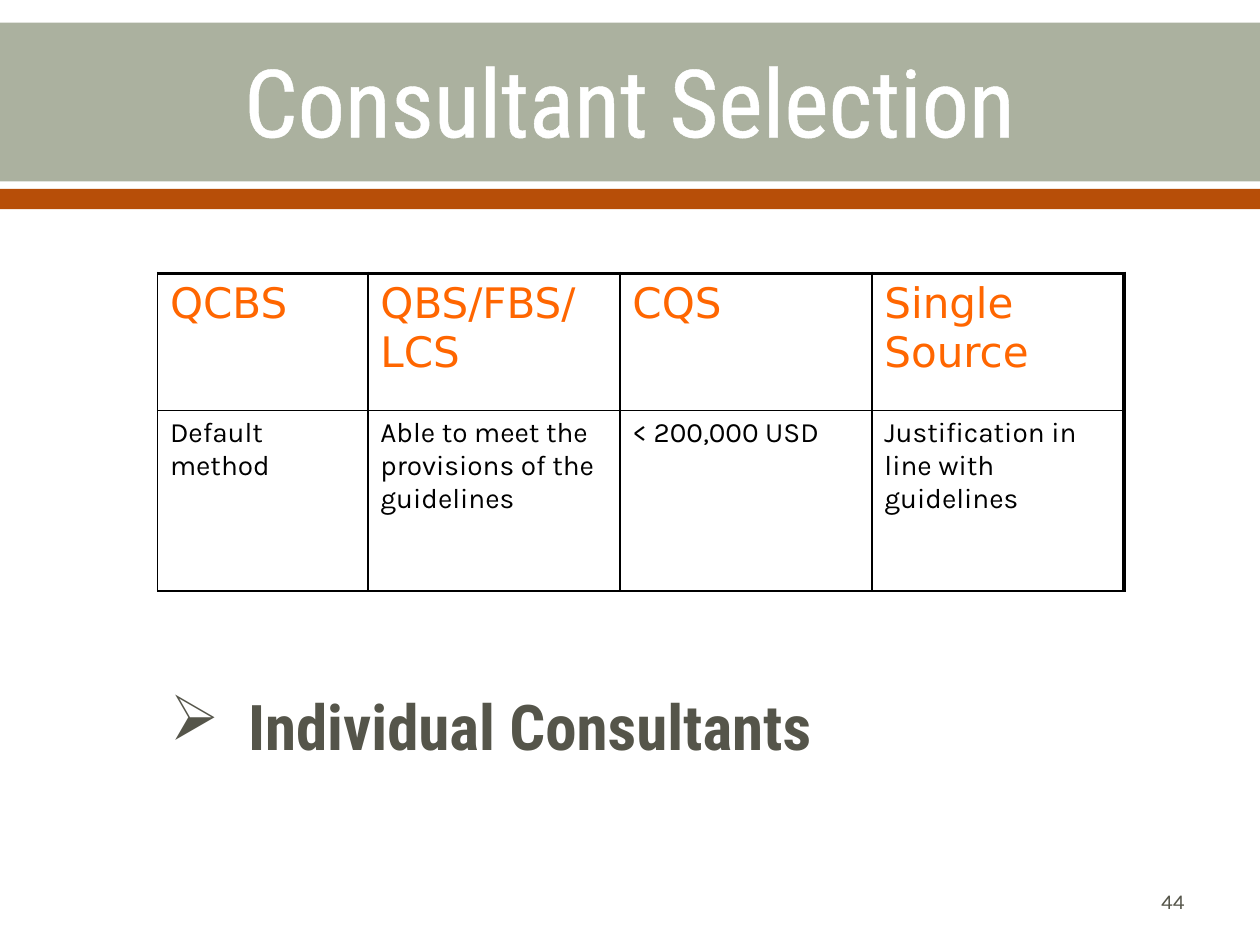
from lxml import etree
from pptx import Presentation
from pptx.dml.color import RGBColor
from pptx.enum import shapes, text
from pptx.oxml import ns
from pptx.util import Inches, Pt

TITLE = "Consultant Selection"
METHODS = [
    ("QCBS", "Default method"),
    ("QBS/FBS/LCS", "Able to meet the provisions of the guidelines"),
    ("CQS", "< 200,000 USD"),
    ("Single Source", "Justification in line with guidelines"),
]
BULLET, OTHER_METHOD = "➢", "Individual Consultants"
PAGE_NUMBER = "44"

HEADING_FONT, BODY_FONT, METHOD_FONT = "Roboto Condensed", "Karla", "DejaVu Sans"
WHITE, BLACK, SAGE, RUST = "FFFFFF", "000000", "ABB19F", "B74E08"
ORANGE, OLIVE = "FF6600", "55554A"
BANDS = [(0.18, 1.26, SAGE), (1.5, 0.16, RUST)]  # top, height, colour
COLUMN_WIDTHS = [1.67, 2, 2, 2]
ROW_HEIGHTS = [1.09, 1.43]
ROW_STYLES = [(METHOD_FONT, 24, ORANGE), (BODY_FONT, 16, BLACK)]
THIN, THICK = 1, 2.25


def rgb(color):
    return RGBColor.from_string(color)


def write(frame, wording, font, size, color, bold=False, align=text.PP_ALIGN.LEFT):
    frame.text = wording
    paragraph = frame.paragraphs[0]
    paragraph.alignment = align
    run = paragraph.runs[0]
    run.font.name, run.font.size, run.font.bold = font, Pt(size), bold
    run.font.color.rgb = rgb(color)
    return paragraph


def add_text(slide, box, *style, anchor=text.MSO_ANCHOR.TOP, **options):
    frame = slide.shapes.add_textbox(*map(Inches, box)).text_frame
    frame.word_wrap = True
    frame.vertical_anchor = anchor
    return write(frame, *style, **options)


def line_xml(tag, width, color):
    line = etree.Element(ns.qn(tag), w=str(Pt(width)))
    fill = etree.SubElement(line, ns.qn("a:solidFill"))
    etree.SubElement(fill, ns.qn("a:srgbClr"), val=color)
    return line


def add_bands(slide):
    for top, height, color in BANDS:
        band = slide.shapes.add_shape(
            shapes.MSO_SHAPE.RECTANGLE, 0, Inches(top), Inches(10), Inches(height))
        band.shadow.inherit = False
        band.fill.solid()
        band.fill.fore_color.rgb = rgb(color)
        band.line.fill.background()


def add_methods(slide):
    rows, columns = len(ROW_HEIGHTS), len(METHODS)
    table = slide.shapes.add_table(
        rows, columns, Inches(1.25), Inches(2.17),
        Inches(sum(COLUMN_WIDTHS)), Inches(sum(ROW_HEIGHTS))).table
    table.first_row = table.horz_banding = False
    for column, width in zip(table.columns, COLUMN_WIDTHS):
        column.width = Inches(width)
    for row, height in zip(table.rows, ROW_HEIGHTS):
        row.height = Inches(height)
    for c, method in enumerate(METHODS):
        for r, wording in enumerate(method):
            cell = table.cell(r, c)
            write(cell.text_frame, wording, *ROW_STYLES[r])
            cell.fill.background()
            borders = {
                "a:lnL": THIN,
                "a:lnR": THICK if c == columns - 1 else THIN,
                "a:lnT": THICK if r == 0 else THIN,
                "a:lnB": THIN,
            }
            properties = cell._tc.get_or_add_tcPr()
            for place, (side, width) in enumerate(borders.items()):
                properties.insert(place, line_xml(side, width, BLACK))


def add_title(slide):
    title = add_text(slide, (0.5, 0.33, 9, 0.92), TITLE, HEADING_FONT, 54, WHITE,
                     anchor=text.MSO_ANCHOR.MIDDLE, align=text.PP_ALIGN.CENTER)
    title.runs[0].font._element.insert(0, line_xml("a:ln", 1.1, WHITE))


def add_other_method(slide):
    item = add_text(slide, (1.25, 5.41, 9.08, 0.71), OTHER_METHOD,
                    HEADING_FONT, 36, OLIVE, bold=True)
    properties = item._p.get_or_add_pPr()
    properties.set("marL", str(Inches(0.62)))
    properties.set("indent", str(-Inches(0.62)))
    etree.SubElement(properties, ns.qn("a:buChar"), char=BULLET)


def main():
    deck = Presentation()
    deck.slide_width, deck.slide_height = Inches(10), Inches(7.5)
    slide = deck.slides.add_slide(deck.slide_layouts[6])
    add_bands(slide)
    add_methods(slide)
    add_title(slide)
    add_other_method(slide)
    add_text(slide, (7.17, 6.95, 2.33, 0.4), PAGE_NUMBER, BODY_FONT, 12, OLIVE,
             anchor=text.MSO_ANCHOR.MIDDLE, align=text.PP_ALIGN.RIGHT)
    deck.save("out.pptx")


if __name__ == "__main__":
    main()
